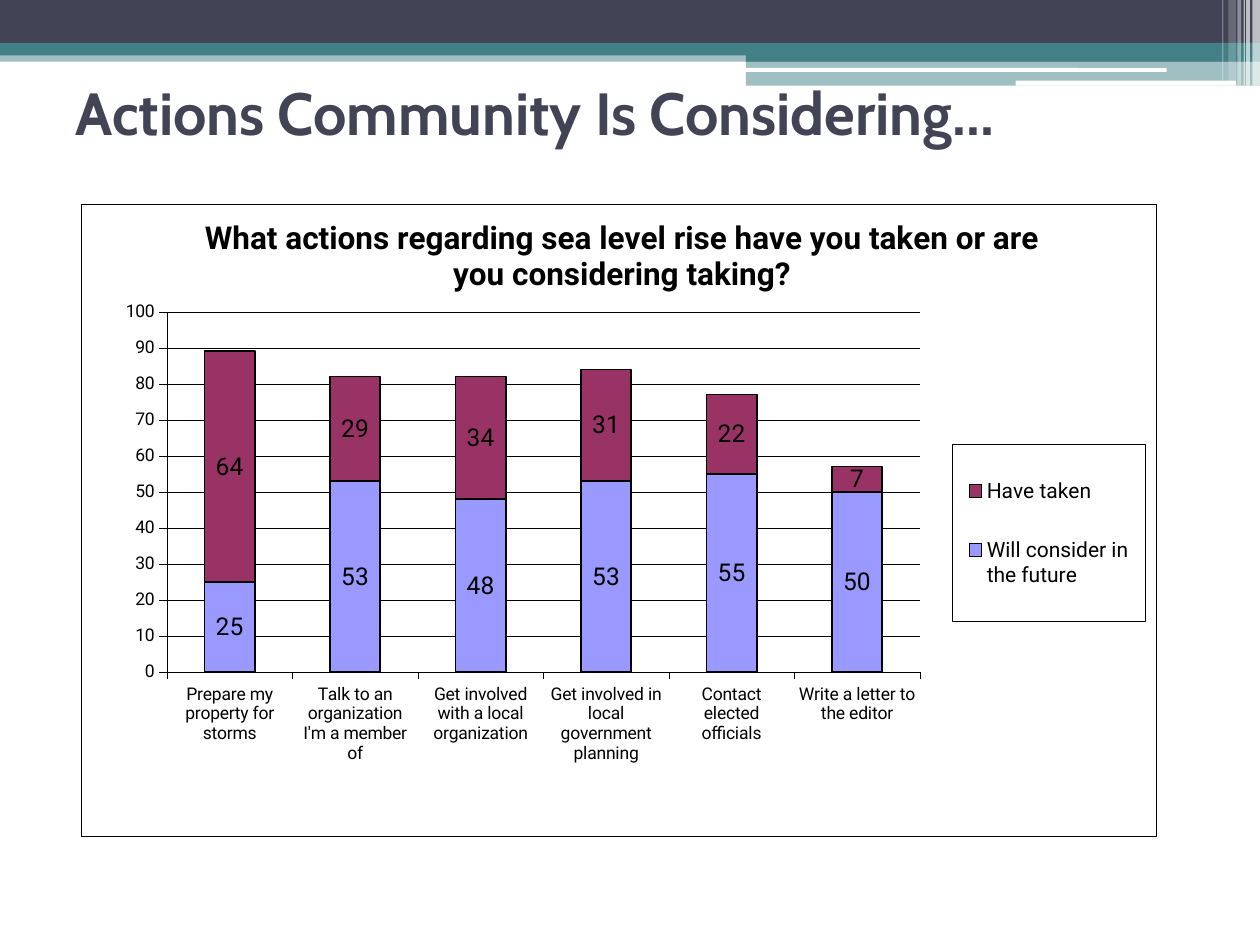
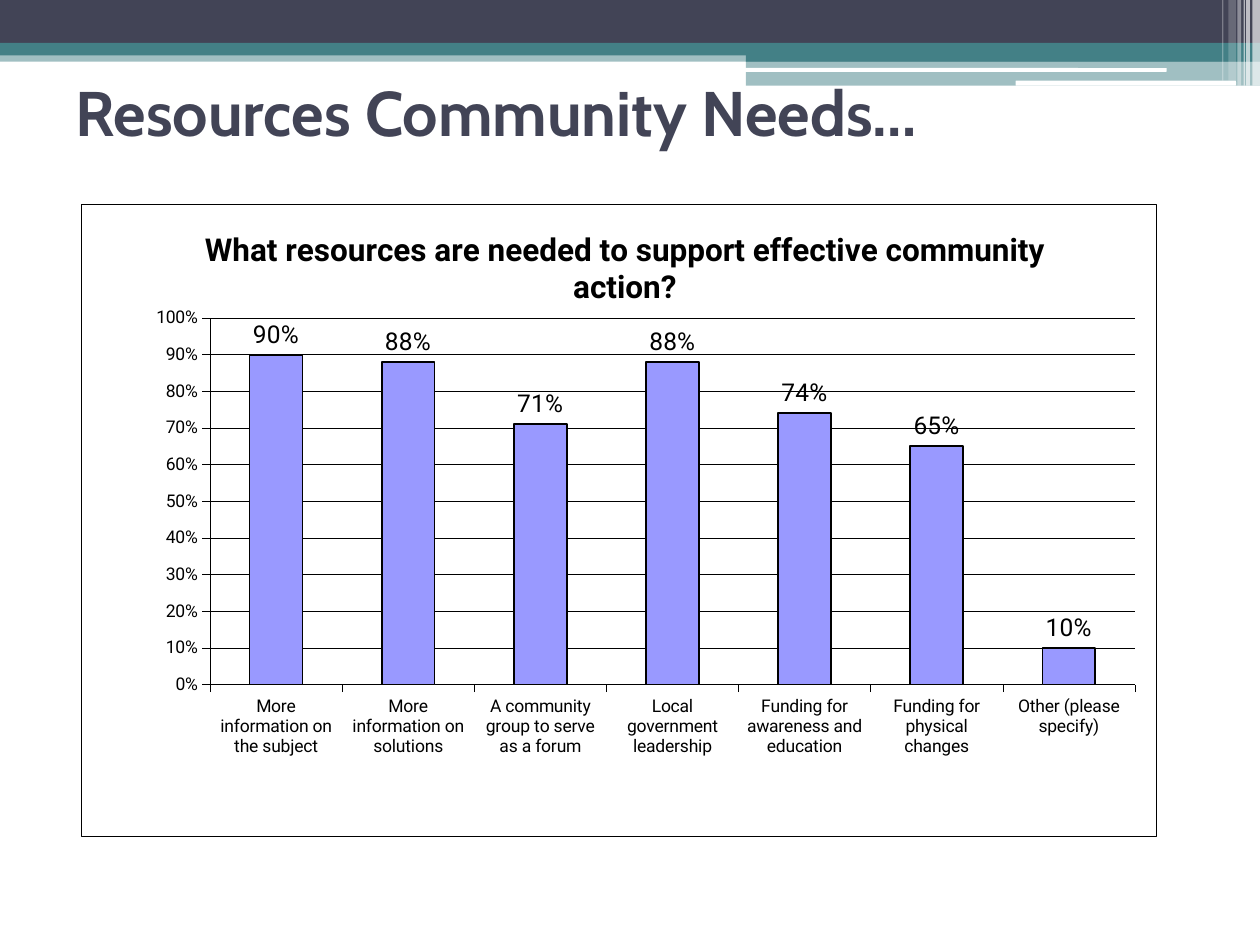
from lxml.etree import SubElement
from pptx import Presentation
from pptx.chart.data import CategoryChartData
from pptx.dml.color import RGBColor
from pptx.enum.chart import XL_CHART_TYPE, XL_LABEL_POSITION, XL_LEGEND_POSITION, XL_TICK_MARK
from pptx.enum.shapes import MSO_SHAPE
from pptx.enum.text import MSO_ANCHOR, MSO_AUTO_SIZE, PP_ALIGN
from pptx.oxml import parse_xml
from pptx.oxml.ns import nsdecls, qn
from pptx.util import Inches, Pt

WIDTH, HEIGHT = Inches(10), Inches(7.5)
COLS, ROWS = 100, 75
HEX = {"navy": "424456", "teal": "438086", "white": "FFFFFF", "black": "000000",
       "blue": "9999FF", "plum": "993366"}
HEAD, BODY = "Cabin", "Roboto"

TITLE = (5, 3, 95, 11.7)
FRAME = (6.4, 16.2, 85.4, 50.2)
BANDS = [
    (0, 4, 100, 0.9, "teal", 50),
    (0, 0, 100, 3.4, "navy", 100),
    (0, 3.4, 100, 1, "teal", 100),
    (59.2, 3.9, 40.8, 1, "teal", 100),
    (59.2, 4.8, 40.8, 2, "teal", 50),
]
SLITS = [(59.1, 5.4, 33.5, 0.3), (80.6, 6.4, 17.5, 0.4)]
STRIPES = [(99.4, 0.6, 6.8, 65), (98.9, 0.3, 6.8, 65), (98.7, 0.1, 6.8, 60),
           (98.2, 0.3, 6.8, 40), (97.5, 0.6, 6.4, 20), (97, 0.1, 6.4, 30)]


def color(name):
    return RGBColor.from_string(HEX[name])


def grid(left, top, wide, high):
    return (int(WIDTH * left / COLS), int(HEIGHT * top / ROWS),
            int(WIDTH * wide / COLS), int(HEIGHT * high / ROWS))


def style(font, size, bold=False, face=BODY, tint="black"):
    font.name, font.size, font.bold = face, Pt(size), bold
    font.color.rgb = color(tint)


def stroke(line, width=0.25):
    line.color.rgb = color("black")
    line.width = Pt(width)


def add_band(slide, cells, tint, alpha=100, kind=MSO_SHAPE.RECTANGLE):
    band = slide.shapes.add_shape(kind, *grid(*cells))
    band.shadow.inherit = False
    band.line.fill.background()
    band.fill.solid()
    band.fill.fore_color.rgb = color(tint)
    if alpha < 100:
        tone = band.element.spPr.find(".//" + qn("a:srgbClr"))
        SubElement(tone, qn("a:alpha")).set("val", str(alpha * 1000))
    return band


def dress(layout, slide):
    bands = [add_band(slide, cells, tint, alpha) for *cells, tint, alpha in BANDS]
    bands += [add_band(slide, cells, "white", kind=MSO_SHAPE.ROUNDED_RECTANGLE)
              for cells in SLITS]
    bands += [add_band(slide, (left, 0, wide, high), "white", alpha)
              for left, wide, high, alpha in STRIPES]
    for place, band in enumerate(bands):
        band.element.xpath("p:nvSpPr/p:cNvPr")[0].set("id", str(100 + place))
        layout.shapes.element.insert(2 + place, band.element)


def set_title(slide, text, size):
    title = slide.shapes.title
    title.left, title.top, title.width, title.height = grid(*TITLE)
    frame = title.text_frame
    frame.auto_size = MSO_AUTO_SIZE.NONE
    frame.vertical_anchor = MSO_ANCHOR.MIDDLE
    para = frame.paragraphs[0]
    para.alignment = PP_ALIGN.LEFT
    run = para.add_run()
    run.text = text
    style(run.font, size, True, HEAD, "navy")


def arrange(node, index, left, top, wide=None, high=None, inner=False):
    old = node.find(qn("c:layout"))
    if old is not None:
        node.remove(old)
    target = '<c:layoutTarget val="inner"/>' if inner else ""
    modes = '<c:xMode val="edge"/><c:yMode val="edge"/>'
    sizes = [("x", left), ("y", top), ("w", wide), ("h", high)]
    marks = "".join(f'<c:{key} val="{val}"/>' for key, val in sizes if val is not None)
    node.insert(index, parse_xml(
        f'<c:layout {nsdecls("c")}><c:manualLayout>{target}{modes}{marks}'
        '</c:manualLayout></c:layout>'))


def border(node):
    node.addnext(parse_xml(
        f'<c:spPr {nsdecls("c", "a")}>'
        f'<a:solidFill><a:srgbClr val="{HEX["white"]}"/></a:solidFill>'
        f'<a:ln w="{Pt(0.25)}"><a:solidFill><a:srgbClr val="{HEX["black"]}"/>'
        '</a:solidFill></a:ln></c:spPr>'))


def set_axes(chart, top, step, form):
    for axis in (chart.category_axis, chart.value_axis):
        style(axis.tick_labels.font, 10)
        stroke(axis.format.line)
        axis.major_tick_mark = XL_TICK_MARK.OUTSIDE
        axis.minor_tick_mark = XL_TICK_MARK.NONE
    scale = chart.value_axis
    scale.minimum_scale, scale.maximum_scale, scale.major_unit = 0, top, step
    scale.tick_labels.number_format = form
    scale.tick_labels.number_format_is_linked = False
    scale.has_major_gridlines = True
    stroke(scale.major_gridlines.format.line)


def set_bars(plot, tints, form, spot):
    plot.gap_width = 150
    plot.vary_by_categories = False
    for bars, tint in zip(plot.series, tints):
        bars.format.fill.solid()
        bars.format.fill.fore_color.rgb = color(tint)
        stroke(bars.format.line, 1)
        tags = bars.data_labels
        tags.show_value = True
        tags.number_format, tags.number_format_is_linked = form, False
        tags.position = spot
        style(tags.font, 14)


def set_head(chart, text, spot):
    chart.has_title = True
    title = chart.chart_title
    run = title.text_frame.paragraphs[0].add_run()
    run.text = text
    style(run.font, 18, True)
    arrange(chart.element.xpath("c:chart/c:title")[0], 1, *spot)


def add_legend(chart, area):
    chart.has_legend = True
    legend = chart.legend
    legend.position = XL_LEGEND_POSITION.RIGHT
    legend.include_in_layout = False
    style(legend.font, 12)
    node = chart.element.xpath("c:chart/c:legend")[0]
    arrange(node, 1, *area)
    border(node.find(qn("c:overlay")))


def add_bars(slide, kind, head, spot, area, cats, rows, top, form, place):
    data = CategoryChartData(number_format=form)
    data.categories = cats
    for name, vals in rows:
        data.add_series(name, vals)
    chart = slide.shapes.add_chart(kind, *grid(*FRAME), data).chart
    style(chart.font, 10)
    chart.has_legend = False
    set_head(chart, head, spot)
    set_axes(chart, top, top / 10, form)
    set_bars(chart.plots[0], ("blue", "plum"), form, place)
    arrange(chart.element.xpath("c:chart/c:plotArea")[0], 0, *area, inner=True)
    border(chart.element.find(qn("c:chart")))
    return chart


def show_acts(slide):
    set_title(slide, "Actions Community Is Considering…", 34)
    chart = add_bars(
        slide, XL_CHART_TYPE.COLUMN_STACKED,
        "What actions regarding sea level rise have you taken or are you considering taking?",
        (0.11, 0.01), (0.08, 0.17, 0.7, 0.57),
        ["Prepare my property for storms", "Talk to an organization I'm a member of",
         "Get involved with a local organization",
         "Get involved in local government planning",
         "Contact elected officials", "Write a letter to the editor"],
        [("Will consider in the future", (25, 53, 48, 53, 55, 50)),
         ("Have taken", (64, 29, 34, 31, 22, 7))],
        100, "General", XL_LABEL_POSITION.CENTER)
    chart.plots[0].overlap = 100
    add_legend(chart, (0.81, 0.38, 0.18, 0.28))


def show_needs(slide):
    set_title(slide, "Resources Community Needs…", 36)
    add_bars(
        slide, XL_CHART_TYPE.COLUMN_CLUSTERED,
        "What resources are needed to support effective community action?",
        (0.11, 0.03), (0.12, 0.18, 0.86, 0.58),
        ["More information on the subject", "More information on solutions",
         "A community group to serve as a forum", "Local government leadership",
         "Funding for awareness and education", "Funding for physical changes",
         "Other (please specify)"],
        [("Series 1", (0.9, 0.88, 0.71, 0.88, 0.74, 0.65, 0.1))],
        1, "0%", XL_LABEL_POSITION.OUTSIDE_END)


def main():
    deck = Presentation()
    deck.slide_width, deck.slide_height = WIDTH, HEIGHT
    layout = deck.slide_layouts[5]
    acts, needs = (deck.slides.add_slide(layout) for _ in range(2))
    dress(layout, acts)
    show_acts(acts)
    show_needs(needs)
    deck.save("out.pptx")


if __name__ == "__main__":
    main()
